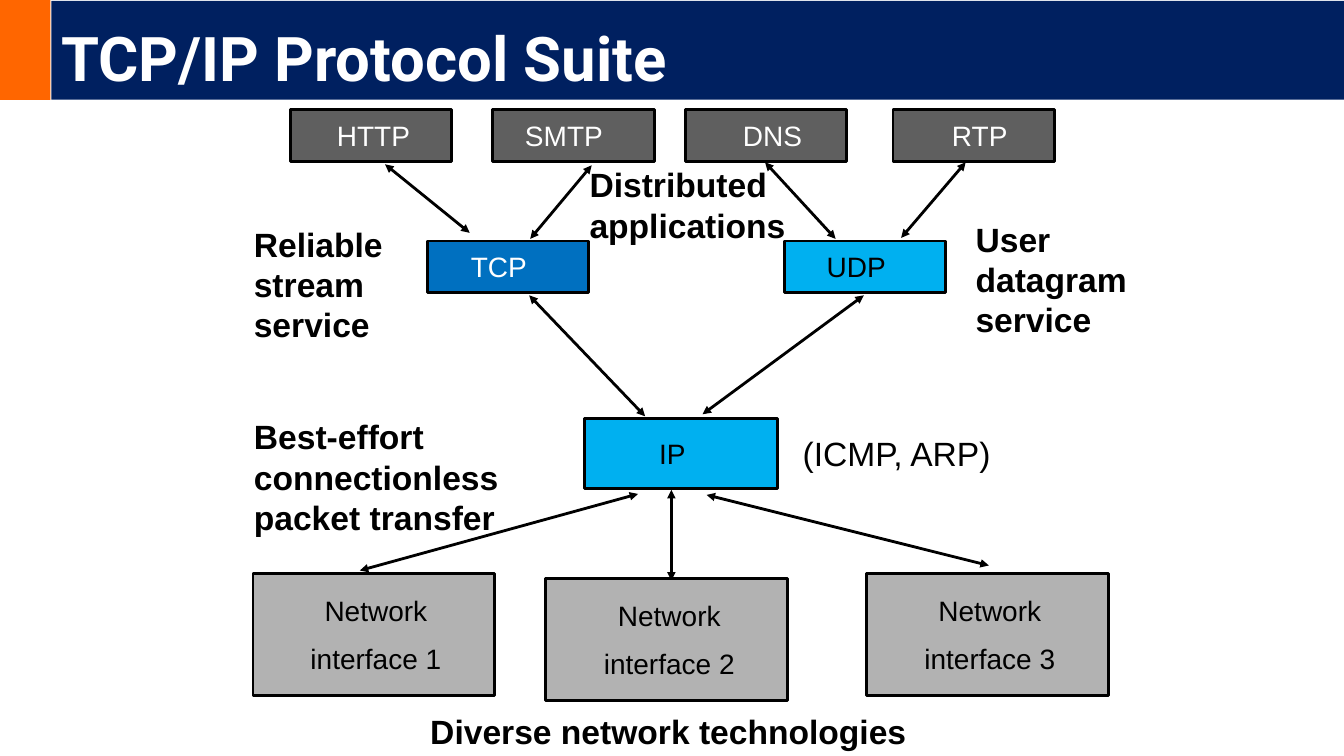
from dataclasses import dataclass
from typing import Any

from lxml.etree import SubElement
from pptx import Presentation
from pptx.dml.color import RGBColor
from pptx.enum.shapes import MSO_CONNECTOR as Connector, MSO_SHAPE as Preset
from pptx.enum.text import MSO_ANCHOR as Anchor, MSO_AUTO_SIZE as Fit, PP_ALIGN as Align
from pptx.oxml.ns import qn
from pptx.util import Inches, Pt

COLUMNS, ROWS = 133.33, 75
CELL = Inches(0.1)
BLACK, WHITE = "000000", "FFFFFF"
ORANGE, NAVY = "FF6600", "002060"
OUTLINE = Pt(2)

TITLE_FONT = {"name": "Roboto", "size": Pt(44), "bold": True}
CAPTION_FONT = {"name": "Arial", "size": Pt(24), "bold": True}
REMARK_FONT = {"name": "Arial", "size": Pt(24), "bold": False}
LABEL_FONT = {"name": "Arial", "size": Pt(20), "bold": False}

TITLE_FRAME = {"vertical_anchor": Anchor.BOTTOM, "word_wrap": True}
CAPTION_FRAME = {"word_wrap": True, "auto_size": Fit.SHAPE_TO_FIT_TEXT}
LABEL_FRAME = {"vertical_anchor": Anchor.MIDDLE, "word_wrap": False,
               "auto_size": Fit.SHAPE_TO_FIT_TEXT}


@dataclass(frozen=True)
class Area:
    column: float
    row: float
    columns: float
    rows: float

    def emu(self) -> list[int]:
        return [cells(n) for n in (self.column, self.row, self.columns, self.rows)]


@dataclass(frozen=True)
class Tier:
    columns: float
    rows: float
    label_rows: float
    fill: str
    ink: str


@dataclass(frozen=True)
class Protocol:
    name: str
    tier: Tier
    column: float
    row: float
    label_column: float
    label_columns: float


@dataclass(frozen=True)
class Caption:
    text: str
    area: Area


@dataclass(frozen=True)
class Exchange:
    start: tuple[float, float]
    end: tuple[float, float]


APPLICATION = Tier(16, 5.1, 4.3, "5F5F5F", WHITE)
STREAM = Tier(16, 5.1, 4.3, "0070C0", WHITE)
DATAGRAM = Tier(16, 5.1, 4.3, "00B0F0", BLACK)
INTERNET = Tier(19.1, 7, 4.3, "00B0F0", BLACK)
NETWORK = Tier(24, 12.1, 9.3, "B2B2B2", BLACK)

PROTOCOLS = [
    Protocol("HTTP", APPLICATION, 28.8, 10.9, 31.9, 10.3),
    Protocol("SMTP", APPLICATION, 48.9, 10.9, 51.1, 9.7),
    Protocol("DNS", APPLICATION, 68, 10.9, 72.3, 8.7),
    Protocol("RTP", APPLICATION, 88.6, 10.9, 93.4, 7.6),
    Protocol("TCP", STREAM, 42.4, 23.9, 45.7, 7.6),
    Protocol("UDP", DATAGRAM, 77.8, 23.9, 81, 7.9),
    Protocol("IP", INTERNET, 58, 41.5, 64.4, 4.6),
    Protocol("Network\ninterface 1", NETWORK, 25.1, 56.9, 27.6, 19.4),
    Protocol("Network\ninterface 2", NETWORK, 54.1, 57.4, 56.7, 19.4),
    Protocol("Network\ninterface 3", NETWORK, 86, 56.9, 88.5, 19.4),
]

CAPTIONS = [
    Caption("Distributed applications", Area(57.5, 15.8, 25.8, 9.1)),
    Caption("Reliable stream service", Area(24.2, 21.7, 20, 13.1)),
    Caption("User\ndatagram service", Area(95.8, 21.2, 20, 13.1)),
    Caption("Best-effort\nconnectionless packet transfer", Area(24.2, 40.8, 31.8, 13.1)),
    Caption("Diverse network technologies", Area(41.7, 70, 51.7, 5)),
]
REMARK = Caption("(ICMP, ARP)", Area(78.3, 42.4, 21.3, 5))

EXCHANGES = [
    Exchange((38.2, 16.3), (46.6, 23.1)),
    Exchange((52.6, 23.7), (58.7, 16.4)),
    Exchange((82.9, 23.7), (75.9, 16.1)),
    Exchange((89.4, 23.6), (95.8, 16.1)),
    Exchange((64, 41.3), (52.5, 29.3)),
    Exchange((69.7, 41.1), (85.7, 29.3)),
    Exchange((35.7, 56.6), (63.3, 49)),
    Exchange((66.6, 57.6), (66.6, 48.6)),
    Exchange((98.1, 56.1), (70.1, 49.1)),
]


def cells(count: float) -> int:
    return round(count * CELL)


def paint(fill: Any, colour: str) -> None:
    fill.solid()
    fill.fore_color.rgb = RGBColor.from_string(colour)


def apply(target: Any, formats: dict[str, Any]) -> None:
    for attribute, value in formats.items():
        setattr(target, attribute, value)


def write(holder: Any, text: str, ink: str, font: dict, frame: dict, paragraph: dict) -> None:
    body = holder.text_frame
    body.text = text
    apply(body, frame)
    for line in body.paragraphs:
        apply(line, paragraph)
        apply(line.runs[0].font, font)
        paint(line.runs[0].font.fill, ink)


def draw_block(slide: Any, area: Area, colour: str, outlined: bool = False) -> Any:
    block = slide.shapes.add_shape(Preset.RECTANGLE, *area.emu())
    block.shadow.inherit = False
    paint(block.fill, colour)
    if outlined:
        paint(block.line.fill, BLACK)
        block.line.width = OUTLINE
    else:
        block.line.fill.background()
    return block


def draw_caption(slide: Any, caption: Caption, ink: str, font: dict, frame: dict,
                 align: Align) -> Any:
    holder = slide.shapes.add_textbox(*caption.area.emu())
    write(holder, caption.text, ink, font, frame, {"alignment": align})
    return holder


def draw_protocol(slide: Any, protocol: Protocol) -> None:
    tier = protocol.tier
    draw_block(slide, Area(protocol.column, protocol.row, tier.columns, tier.rows),
               tier.fill, outlined=True)
    label_row = protocol.row + (tier.rows - tier.label_rows) / 2
    label = Caption(protocol.name, Area(protocol.label_column, label_row,
                                        protocol.label_columns, tier.label_rows))
    holder = draw_caption(slide, label, tier.ink, LABEL_FONT, LABEL_FRAME, Align.CENTER)
    for line in holder.text_frame.paragraphs[1:]:
        line.space_before = Pt(10)


def draw_exchange(slide: Any, exchange: Exchange) -> None:
    ends = [cells(n) for n in (*exchange.start, *exchange.end)]
    arrow = slide.shapes.add_connector(Connector.STRAIGHT, *ends)
    paint(arrow.line.fill, BLACK)
    arrow.line.width = OUTLINE
    stroke = arrow.line._get_or_add_ln()
    for tip in ("a:headEnd", "a:tailEnd"):
        SubElement(stroke, qn(tip), type="triangle")
    SubElement(arrow._element.spPr, qn("a:effectLst"))


def main() -> None:
    deck = Presentation()
    deck.slide_width, deck.slide_height = cells(COLUMNS), cells(ROWS)
    slide = deck.slides.add_slide(deck.slide_layouts[6])

    draw_block(slide, Area(0, 0, 5, 9.9), ORANGE)
    banner = draw_block(slide, Area(5.1, 0.1, COLUMNS - 5.1, 9.8), NAVY)
    write(banner, "TCP/IP Protocol Suite", WHITE, TITLE_FONT, TITLE_FRAME,
          {"alignment": Align.LEFT, "line_spacing": 0.9})

    for caption in CAPTIONS:
        draw_caption(slide, caption, BLACK, CAPTION_FONT, CAPTION_FRAME, Align.LEFT)
    draw_caption(slide, REMARK, BLACK, REMARK_FONT, LABEL_FRAME, Align.CENTER)
    for exchange in EXCHANGES:
        draw_exchange(slide, exchange)
    for protocol in PROTOCOLS:
        draw_protocol(slide, protocol)

    deck.save("out.pptx")


if __name__ == "__main__":
    main()
